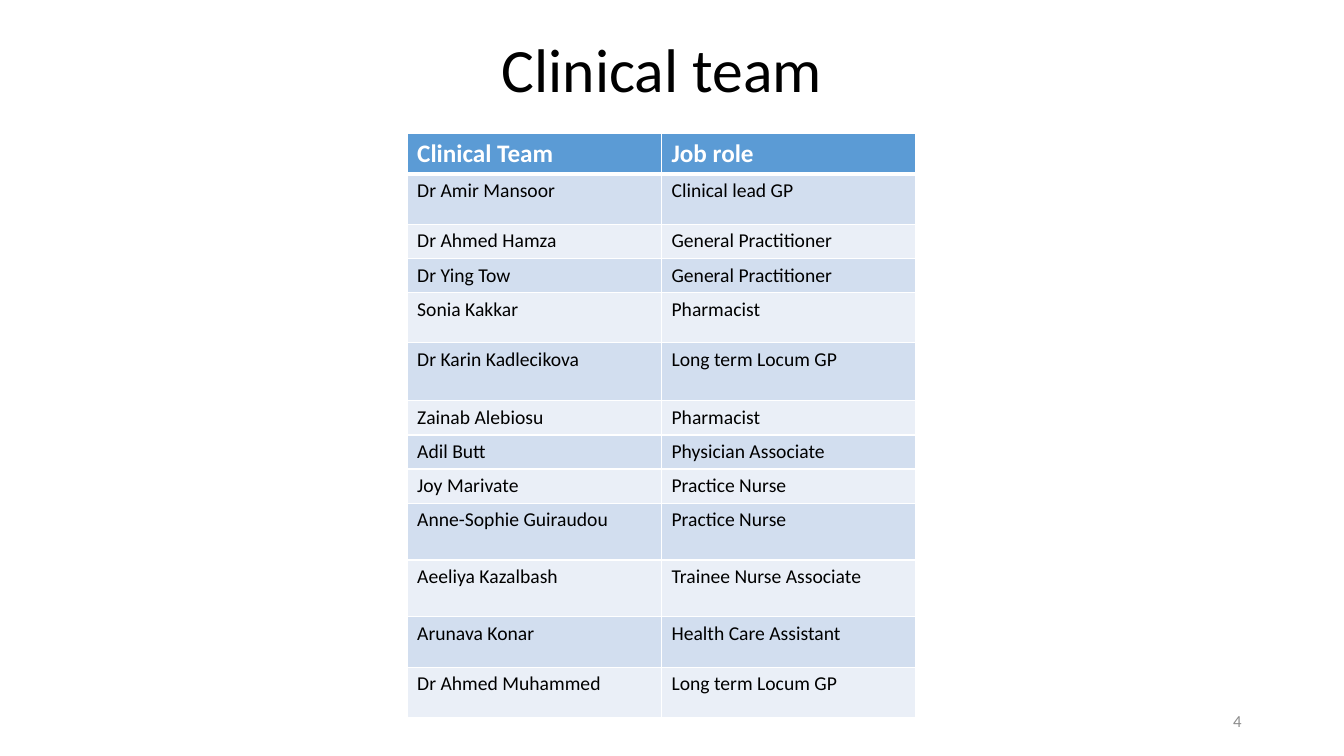
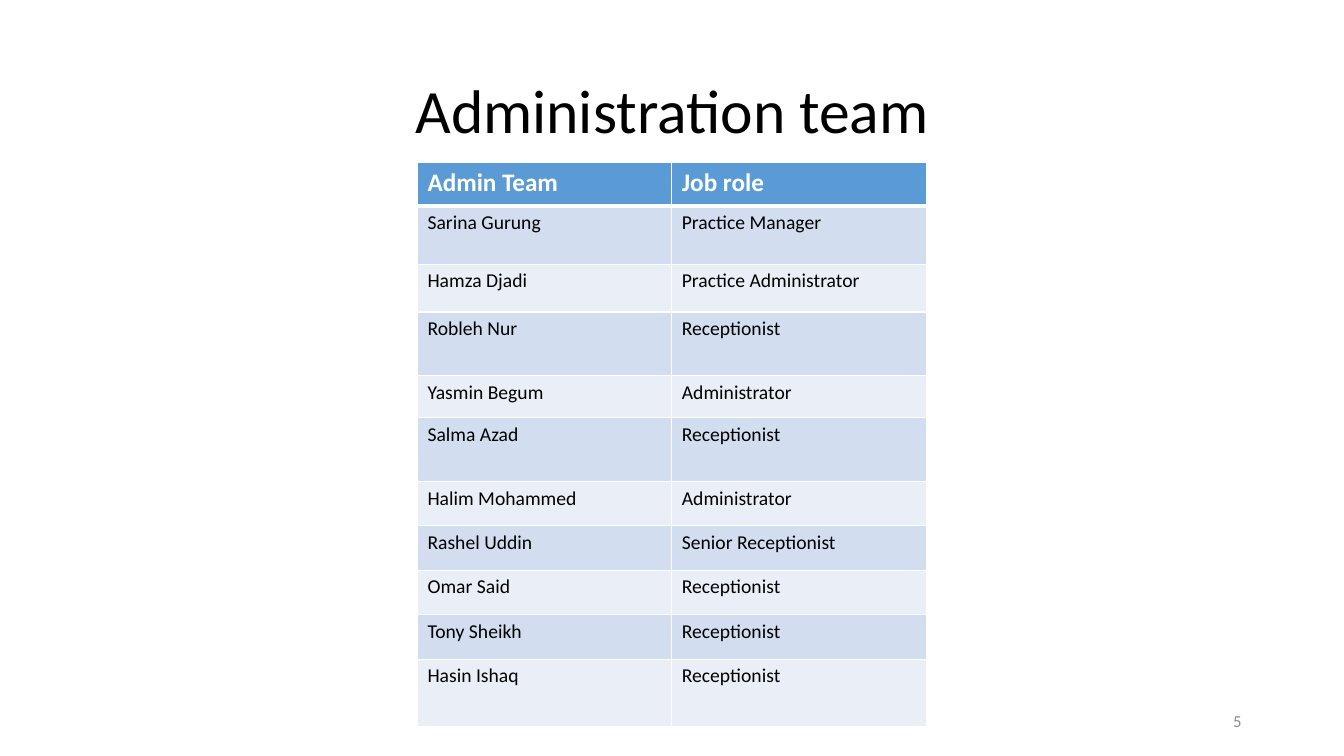
"""Build the clinical and administration team slides."""
from dataclasses import dataclass

from lxml.etree import SubElement
from pptx import Presentation
from pptx.dml.color import RGBColor
from pptx.enum.text import MSO_ANCHOR, MSO_AUTO_SIZE, PP_ALIGN
from pptx.oxml.ns import qn
from pptx.presentation import Presentation as Deck
from pptx.slide import Slide
from pptx.table import _Cell
from pptx.text.text import TextFrame
from pptx.util import Cm, Pt

FONT = "Calibri"
COLOURS = {
    "text": "000000",
    "header_text": "FFFFFF",
    "page_number": "8C8C8C",
    "header": "5B9BD5",
    "odd_row": "D2DEEF",
    "even_row": "EAEFF7",
    "border": "FFFFFF",
}
TITLE_SIZE = (Cm(29.21), Cm(3.68))
COLUMN_WIDTH = Cm(6.41)
THIN, THICK = Pt(1), Pt(3)


@dataclass(frozen=True)
class Member:
    name: str
    role: str
    height: float


@dataclass(frozen=True)
class Team:
    title: str
    title_at: tuple[float, float]
    table_at: tuple[float, float]
    header: Member
    members: tuple[Member, ...]
    page_number: int


TEAMS = (
    Team(
        "Clinical team", (2.08, 0), (10.26, 3.36),
        Member("Clinical Team", "Job role", 1.02),
        (
            Member("Dr Amir Mansoor", "Clinical lead GP", 1.27),
            Member("Dr Ahmed Hamza", "General Practitioner", 0.86),
            Member("Dr Ying Tow", "General Practitioner", 0.86),
            Member("Sonia Kakkar", "Pharmacist", 1.27),
            Member("Dr Karin Kadlecikova", "Long term Locum GP", 1.46),
            Member("Zainab Alebiosu", "Pharmacist", 0.86),
            Member("Adil Butt", "Physician Associate", 0.86),
            Member("Joy Marivate", "Practice Nurse", 0.86),
            Member("Anne-Sophie Guiraudou", "Practice Nurse", 1.43),
            Member("Aeeliya Kazalbash", "Trainee Nurse Associate", 1.43),
            Member("Arunava Konar", "Health Care Assistant", 1.27),
            Member("Dr Ahmed Muhammed", "Long term Locum GP", 1.27),
        ),
        4,
    ),
    Team(
        "Administration team", (2.34, 1.02), (10.52, 4.1),
        Member("Admin Team", "Job role", 1.09),
        (
            Member("Sarina Gurung", "Practice Manager", 1.47),
            Member("Hamza Djadi", "Practice Administrator", 1.2),
            Member("Robleh Nur", "Receptionist", 1.6),
            Member("Yasmin Begum", "Administrator", 1.07),
            Member("Salma Azad", "Receptionist", 1.6),
            Member("Halim Mohammed", "Administrator", 1.12),
            Member("Rashel Uddin", "Senior Receptionist", 1.12),
            Member("Omar Said", "Receptionist", 1.12),
            Member("Tony Sheikh", "Receptionist", 1.12),
            Member("Hasin Ishaq", "Receptionist", 1.7),
        ),
        5,
    ),
)


def write_text(frame: TextFrame, text: str, size: float, colour: str,
               align: PP_ALIGN = PP_ALIGN.LEFT, bold: bool = False) -> None:
    frame.text = text
    para = frame.paragraphs[0]
    para.alignment = align
    for span in para.runs:
        span.font.name = FONT
        span.font.size = Pt(size)
        span.font.bold = bold
        span.font.color.rgb = RGBColor.from_string(COLOURS[colour])


def draw_title(page: Slide, team: Team) -> None:
    title = page.shapes.title
    title.left, title.top = (Cm(value) for value in team.title_at)
    title.width, title.height = TITLE_SIZE
    frame = title.text_frame
    write_text(frame, team.title, 44, "text", PP_ALIGN.CENTER)
    frame.paragraphs[0].line_spacing = 0.9
    frame.vertical_anchor = MSO_ANCHOR.MIDDLE
    frame.auto_size = MSO_AUTO_SIZE.NONE


def draw_page_number(page: Slide, number: int) -> None:
    box = page.shapes.add_textbox(Cm(23.92), Cm(17.65), Cm(7.62), Cm(1.01))
    frame = box.text_frame
    frame.word_wrap = True
    frame.vertical_anchor = MSO_ANCHOR.MIDDLE
    write_text(frame, str(number), 12, "page_number", PP_ALIGN.RIGHT)


def draw_borders(cell: _Cell, top: int, bottom: int) -> None:
    properties = cell._tc.get_or_add_tcPr()
    sides = {"a:lnL": THIN, "a:lnR": THIN, "a:lnT": top, "a:lnB": bottom}
    for position, (tag, width) in enumerate(sides.items()):
        line = SubElement(properties, qn(tag), w=str(int(width)))
        fill = SubElement(line, qn("a:solidFill"))
        SubElement(fill, qn("a:srgbClr"), val=COLOURS["border"])
        properties.insert(position, line)


def draw_table(page: Slide, team: Team) -> None:
    rows = (team.header, *team.members)
    left, top = (Cm(value) for value in team.table_at)
    height = Cm(sum(row.height for row in rows))
    table = page.shapes.add_table(
        len(rows), 2, left, top, 2 * COLUMN_WIDTH, height).table
    for column in table.columns:
        column.width = COLUMN_WIDTH
    for index, row in enumerate(rows):
        table.rows[index].height = Cm(row.height)
        is_header = index == 0
        band = "header" if is_header else "odd_row" if index % 2 else "even_row"
        for column_index, text in enumerate((row.name, row.role)):
            cell = table.cell(index, column_index)
            cell.fill.solid()
            cell.fill.fore_color.rgb = RGBColor.from_string(COLOURS[band])
            write_text(cell.text_frame, text, 18 if is_header else 14,
                       "header_text" if is_header else "text", bold=is_header)
            draw_borders(cell, THICK if index == 1 else THIN,
                         THICK if is_header else THIN)


def draw_team(deck: Deck, team: Team) -> None:
    page = deck.slides.add_slide(deck.slide_layouts.get_by_name("Title Only"))
    draw_title(page, team)
    draw_page_number(page, team.page_number)
    draw_table(page, team)


def main() -> None:
    deck = Presentation()
    deck.slide_width, deck.slide_height = Cm(33.87), Cm(19.05)
    for team in TEAMS:
        draw_team(deck, team)
    deck.save("out.pptx")


if __name__ == "__main__":
    main()
